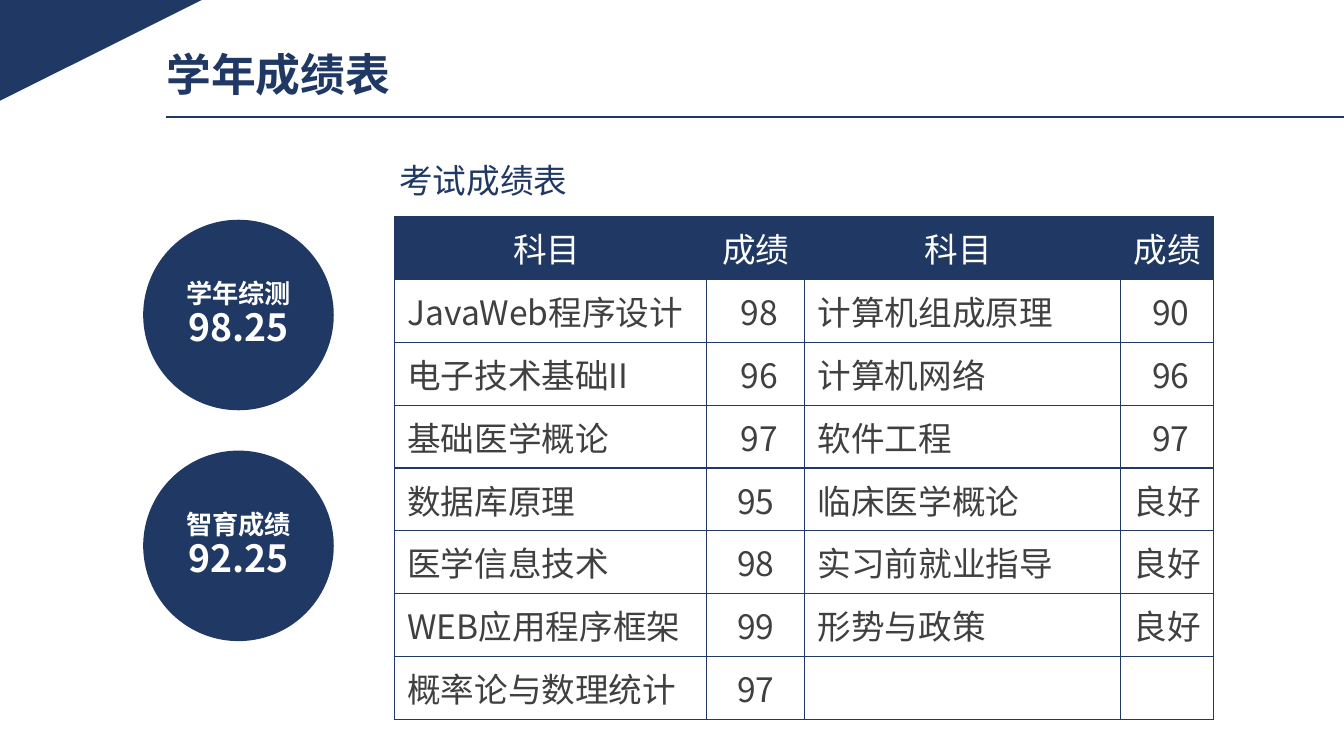
from lxml import etree
from pptx import Presentation
from pptx import util as u
from pptx.dml.color import RGBColor
from pptx.enum import shapes, text
from pptx.oxml import ns

COLORS = {"navy": "203864", "sky": "BDD7EE", "ink": "404040", "white": "FFFFFF"}
FONT = "Noto Sans CJK SC"
WIDTH, HEIGHT = 13.33, 7.5
LEFT, CENTER = text.PP_ALIGN.LEFT, text.PP_ALIGN.CENTER

COLUMNS = [3.1, 0.97, 3.13, 0.93]
GRADES = [
    ["科目 ", "成绩", "科目 ", "成绩"],
    ["JavaWeb程序设计", " 98", "计算机组成原理", " 90"],
    ["电子技术基础II", " 96", "计算机网络", " 96"],
    ["基础医学概论", " 97", "软件工程", " 97"],
    ["数据库原理", "95", "临床医学概论", "良好"],
    ["医学信息技术", "98", "实习前就业指导", "良好"],
    ["WEB应用程序框架", "99", "形势与政策", "良好"],
    ["概率论与数理统计", "97", "", ""],
]
SCORES = [("学年综测", "98.25"), ("智育成绩", "92.25")]


def color(name):
    """Return a palette colour."""
    return RGBColor.from_string(COLORS[name])


def inches(*lengths):
    """Turn lengths in inches into slide units."""
    return [u.Inches(length) for length in lengths]


def add_span(para, words, size, ink, bold=False, align=LEFT, spacing=None):
    """Add one formatted run to a paragraph."""
    para.alignment = align
    para.line_spacing = spacing
    span = para.add_run()
    span.text = words
    span.font.size, span.font.bold = u.Pt(size), bold
    span.font.name = FONT
    span.font.color.rgb = color(ink)
    east = etree.SubElement(span.font._element, ns.qn("a:ea"))
    east.set("typeface", FONT)


def set_frame(frame, across, down, anchor, wrap=True):
    """Set the margins, anchor and wrapping of a text frame."""
    frame.margin_left = frame.margin_right = u.Inches(across)
    frame.margin_top = frame.margin_bottom = u.Inches(down)
    frame.vertical_anchor = anchor
    frame.word_wrap = wrap
    frame.auto_size = text.MSO_AUTO_SIZE.NONE


def paint(shape, fill):
    """Give a shape a plain fill without line or shadow."""
    shape.fill.solid()
    shape.fill.fore_color.rgb = color(fill)
    shape.line.fill.background()
    shape.shadow.inherit = False


def draw_corner(page, width, heights):
    """Layer the corner triangles."""
    for fill, height in heights.items():
        builder = page.shapes.build_freeform(0, 0, scale=u.Inches(1))
        builder.add_line_segments([(width, 0), (0, height)], close=True)
        paint(builder.convert_to_shape(), fill)


def draw_heading(page, left, top, width, height):
    """Place the slide title and the rule beneath it."""
    title = page.shapes.title
    title.left, title.top, title.width, title.height = inches(left, top, width, height)
    set_frame(title.text_frame, 0.12, 0.06, text.MSO_ANCHOR.TOP)
    add_span(title.text_frame.paragraphs[0], "学年成绩表", 32, "navy", True, spacing=0.9)
    base = top + height + 0.01
    rule = page.shapes.add_connector(
        shapes.MSO_CONNECTOR.STRAIGHT, *inches(left + 0.12, base, WIDTH, base))
    rule.line.color.rgb = color("navy")
    rule.line.width = u.Pt(1)
    etree.SubElement(rule._element.spPr, ns.qn("a:effectLst"))


def draw_scores(page, left, top, size, step):
    """Stack the score circles."""
    for index, (label, score) in enumerate(SCORES):
        circle = page.shapes.add_shape(
            shapes.MSO_SHAPE.OVAL, *inches(left, top + index * step, size, size))
        paint(circle, "navy")
        frame = circle.text_frame
        set_frame(frame, 0.1, 0.05, text.MSO_ANCHOR.MIDDLE)
        add_span(frame.paragraphs[0], label, 18.7, "white", True, CENTER, 0.9)
        add_span(frame.add_paragraph(), score, 26.7, "white", True, CENTER, 0.9)


def add_borders(cell):
    """Outline all four sides of a table cell."""
    props = cell._tc.get_or_add_tcPr()
    for index, side in enumerate(["lnL", "lnR", "lnT", "lnB"]):
        line = etree.Element(ns.qn("a:" + side), w=str(u.Pt(1)))
        fill = etree.SubElement(line, ns.qn("a:solidFill"))
        etree.SubElement(fill, ns.qn("a:srgbClr"), val=COLORS["navy"])
        props.insert(index, line)


def fill_cell(cell, words, header, centered):
    """Format one grade cell."""
    cell.margin_left = cell.margin_right = u.Inches(0.13)
    cell.margin_top = cell.margin_bottom = u.Inches(0.07)
    if header:
        cell.fill.solid()
        cell.fill.fore_color.rgb = color("navy")
    else:
        cell.fill.background()
    add_borders(cell)
    if words:
        add_span(cell.text_frame.paragraphs[0], words, 24,
                 "white" if header else "ink", align=CENTER if centered else LEFT)


def draw_grades(page, left, top, row_height):
    """Place the table caption and the grade table."""
    caption = page.shapes.add_textbox(*inches(left - 0.07, top - 0.58, 2.11, 0.46))
    set_frame(caption.text_frame, 0.12, 0.06, text.MSO_ANCHOR.TOP)
    add_span(caption.text_frame.paragraphs[0], "考试成绩表", 24, "navy", spacing=0.9)
    rows = len(GRADES)
    table = page.shapes.add_table(
        rows, len(COLUMNS), *inches(left, top, sum(COLUMNS), rows * row_height)).table
    table.first_row = table.horz_banding = False
    for column, width in zip(table.columns, COLUMNS):
        column.width = u.Inches(width)
    for row, record in enumerate(GRADES):
        table.rows[row].height = u.Inches(row_height)
        for column, words in enumerate(record):
            header = row == 0
            fill_cell(table.cell(row, column), words, header, header or column % 2 == 1)


def main():
    """Build the grade slide."""
    deck = Presentation()
    deck.slide_width, deck.slide_height = inches(WIDTH, HEIGHT)
    page = deck.slides.add_slide(deck.slide_layouts[5])
    draw_corner(page, 2.03, {"sky": 1.29, "navy": 0.96})
    draw_heading(page, 1.53, 0.46, 2.84, 0.69)
    draw_grades(page, 3.91, 2.15, 0.54)
    draw_scores(page, 1.42, 2.18, 1.89, 2.29)
    deck.save("out.pptx")


if __name__ == "__main__":
    main()
